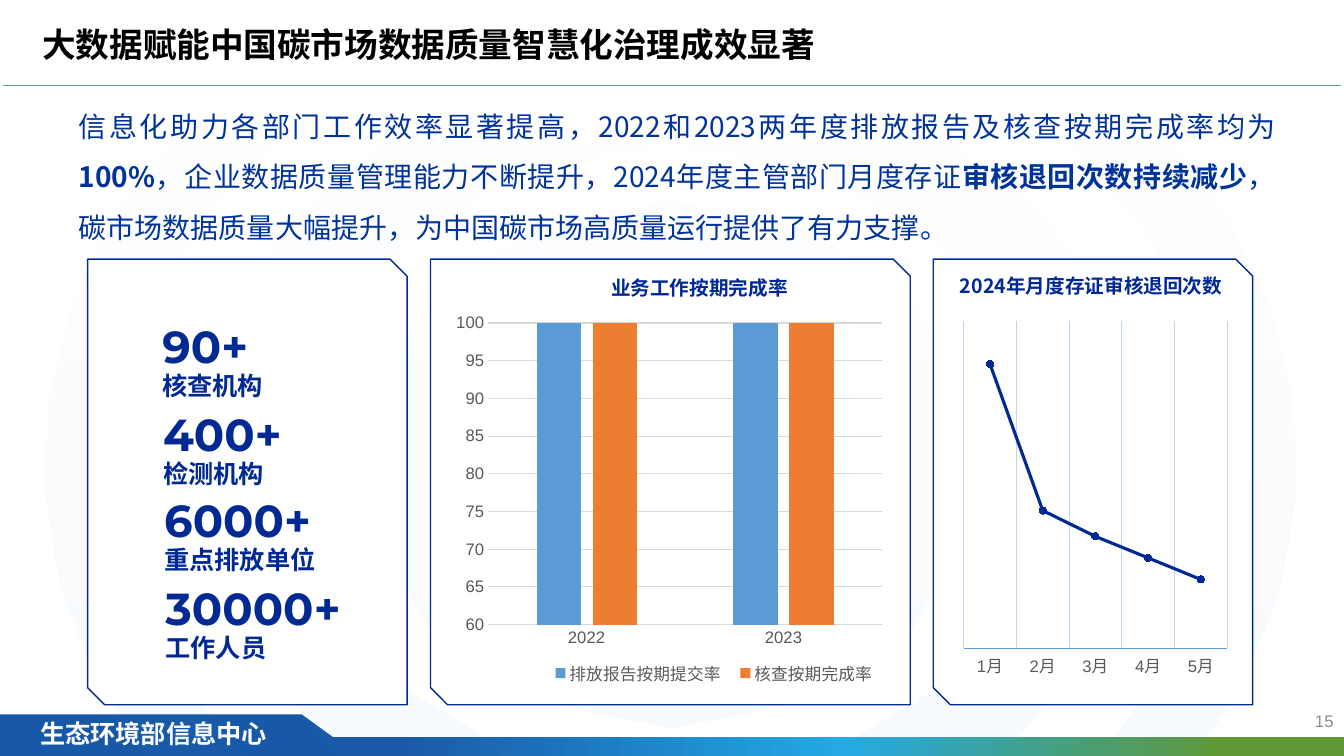
from dataclasses import dataclass
from math import asin, cos, sin
from typing import NamedTuple

from lxml import etree
from pptx import Presentation
from pptx.chart.data import CategoryChartData
from pptx.dml.color import RGBColor
from pptx.enum.chart import XL_CHART_TYPE, XL_LEGEND_POSITION, XL_MARKER_STYLE, XL_TICK_MARK
from pptx.enum.shapes import MSO_CONNECTOR, MSO_SHAPE
from pptx.enum.text import MSO_ANCHOR, MSO_AUTO_SIZE, PP_ALIGN
from pptx.oxml.ns import qn
from pptx.util import Cm, Pt

COLUMN, LINE = XL_CHART_TYPE.COLUMN_CLUSTERED, XL_CHART_TYPE.LINE_MARKERS
LEGEND_BOTTOM, CIRCLE, NO_TICK = XL_LEGEND_POSITION.BOTTOM, XL_MARKER_STYLE.CIRCLE, XL_TICK_MARK.NONE
RECT, SNIPPED, STRAIGHT = MSO_SHAPE.RECTANGLE, MSO_SHAPE.SNIP_2_DIAG_RECTANGLE, MSO_CONNECTOR.STRAIGHT
TOP, MIDDLE, NO_AUTOSIZE = MSO_ANCHOR.TOP, MSO_ANCHOR.MIDDLE, MSO_AUTO_SIZE.NONE
LEFT, CENTER, RIGHT, JUSTIFY = PP_ALIGN.LEFT, PP_ALIGN.CENTER, PP_ALIGN.RIGHT, PP_ALIGN.JUSTIFY

BLACK, WHITE = RGBColor(0, 0, 0), RGBColor(255, 255, 255)
NAVY = RGBColor(0x00, 0x29, 0x93)
BODY_BLUE = RGBColor(0x00, 0x33, 0x99)
BAND_BLUE = RGBColor(0x17, 0x58, 0xA7)
BAND_CYAN = RGBColor(0x24, 0xAA, 0xE3)
BAND_GREEN = RGBColor(0x5E, 0x99, 0x33)
SKY = RGBColor(0x5B, 0x9B, 0xD5)
PALE_SKY = RGBColor(0xBD, 0xD7, 0xEE)
ORANGE = RGBColor(0xED, 0x7D, 0x31)
GRAY = RGBColor(0x59, 0x59, 0x59)
PAGE_GRAY = RGBColor(0x8C, 0x8C, 0x8C)
GRID_GRAY = RGBColor(0xD9, 0xD9, 0xD9)
CJK, LATIN, DIGITS = "Noto Sans CJK SC", "Arial", "Montserrat"
SLIDE_W, SLIDE_H = 33.87, 19.05
CARD_Y, CARD_H, SNIP = 6.53, 11.23, 0.43
RING_X, RING_Y, RING_TOP = 16.89, 11.71, 3.58


class Box(NamedTuple):
    x: float
    y: float
    w: float
    h: float

    def emu(self) -> tuple:
        return tuple(Cm(v) for v in self)


class Stop(NamedTuple):
    pos: int
    color: RGBColor
    alpha: int = 100


class Stat(NamedTuple):
    x: float
    y: float
    value: str
    label: str


@dataclass
class Card:
    x: float
    w: float
    title: str = ""
    title_box: Box | None = None


@dataclass
class Style:
    size: float
    color: RGBColor
    font: str = CJK
    bold: bool = True
    align: PP_ALIGN = LEFT
    inset: bool = False


CARDS = [
    Card(23.52, 8.05, "2024年月度存证审核退回次数", Box(23.93, 6.91, 7.14, 0.51)),
    Card(10.85, 12.09, "业务工作按期完成率", Box(15.24, 6.96, 4.78, 0.51)),
    Card(2.21, 8.05),
]
STATS = [Stat(4.09, 8.02, "90+", "核查机构"), Stat(4.11, 10.26, "400+", "检测机构"),
         Stat(4.14, 12.42, "6000+", "重点排放单位"), Stat(4.17, 14.63, "30000+", "工作人员")]
SUMMARY = [
    ("信息化助力各部门工作效率显著提高，2022和2023两年度排放报告及核查按期完成率均为", False),
    ("100%", True),
    ("，企业数据质量管理能力不断提升，2024年度主管部门月度存证", False),
    ("审核退回次数持续减少", True),
    ("，碳市场数据质量大幅提升，为中国碳市场高质量运行提供了有力支撑。", False),
]


def format_run(r, style: Style, bold: bool) -> None:
    r.font.size, r.font.bold, r.font.name = Pt(style.size), bold, style.font
    r.font.color.rgb = style.color
    etree.SubElement(r._r.rPr, qn("a:ea")).set("typeface", CJK)


def write(sp, box: Box, text: str, style: Style, anchor=TOP) -> None:
    sp.left, sp.top, sp.width, sp.height = box.emu()
    tf = sp.text_frame
    tf.word_wrap, tf.auto_size, tf.vertical_anchor = True, NO_AUTOSIZE, anchor
    if not style.inset:
        tf.margin_left = tf.margin_right = tf.margin_top = tf.margin_bottom = 0
    tf.text = text
    p = tf.paragraphs[0]
    p.alignment = style.align
    for r in p.runs:
        format_run(r, style, style.bold)


def add_text(shapes, box: Box, text: str, style: Style, anchor=TOP) -> None:
    write(shapes.add_textbox(*box.emu()), box, text, style, anchor)


def set_gradient(sp, stops: list[Stop], angle: int) -> None:
    sp.fill.gradient()
    sp.fill.gradient_angle = angle
    gs_list = sp._element.spPr.find(".//" + qn("a:gsLst"))
    for gs in list(gs_list):
        gs_list.remove(gs)
    for stop in stops:
        gs = etree.SubElement(gs_list, qn("a:gs"), pos=str(stop.pos * 1000))
        color = etree.SubElement(gs, qn("a:srgbClr"), val=str(stop.color))
        if stop.alpha < 100:
            etree.SubElement(color, qn("a:alpha"), val=str(stop.alpha * 1000))


def add_outline(shapes, contours: list[list[tuple]]):
    """Build one borderless freeform from closed contours given in cm."""
    contours = [[(Cm(x), Cm(y)) for x, y in points] for points in contours]
    builder = shapes.build_freeform(*contours[0][0])
    for i, points in enumerate(contours):
        if i:
            builder.move_to(*points[0])
        builder.add_line_segments(points[1:], close=True)
    sp = builder.convert_to_shape()
    sp.shadow.inherit = False
    sp.line.fill.background()
    return sp


def ring_edge(rx: float) -> list[tuple]:
    """Right and left arcs of an ellipse, cut off at the top and at the slide's edge."""
    ry, steps = 0.85 * rx, 7
    start = -asin(min(1, (RING_Y - RING_TOP) / ry))
    end = asin(min(1, (SLIDE_H - RING_Y) / ry))
    arc = [start + (end - start) * i / steps for i in range(steps + 1)]
    right = [(rx * cos(a), RING_Y + ry * sin(a)) for a in arc]
    return [(RING_X + x, y) for x, y in right] + [(RING_X - x, y) for x, y in reversed(right)]


def add_card(shapes, card: Card) -> None:
    sp = shapes.add_shape(SNIPPED, *Box(card.x, CARD_Y, card.w, CARD_H).emu())
    sp.shadow.inherit = False
    sp.adjustments[0], sp.adjustments[1] = 0, SNIP / min(card.w, CARD_H)
    sp.fill.solid()
    sp.fill.fore_color.rgb = WHITE
    sp.line.color.rgb, sp.line.width = NAVY, Pt(1)
    if card.title_box:
        add_text(shapes, card.title_box, card.title, Style(14, NAVY, align=CENTER))


def set_layout(parent, index: int, box: Box, inner: bool = False) -> None:
    """Place a chart part by fractions of the chart's size."""
    for old in parent.findall(qn("c:layout")):
        parent.remove(old)
    layout = etree.Element(qn("c:layout"))
    manual = etree.SubElement(layout, qn("c:manualLayout"))
    modes = [("layoutTarget", "inner")] if inner else []
    modes += [("xMode", "edge"), ("yMode", "edge")]
    for tag, value in modes + list(box._asdict().items()):
        etree.SubElement(manual, qn("c:" + tag), val=str(value))
    parent.insert(index, layout)


def style_font(font) -> None:
    font.size, font.name, font.color.rgb = Pt(11.9), LATIN, GRAY


def add_chart(shapes, kind, box: Box, plot_box: Box, cats: list, series: dict,
              low: int, high: int, axis_color: RGBColor):
    data = CategoryChartData()
    data.categories = cats
    for name, values in series.items():
        data.add_series(name, values)
    chart = shapes.add_chart(kind, *box.emu(), data).chart
    chart.has_title = chart.has_legend = False
    style_font(chart.font)
    chart.plots[0].vary_by_categories = False
    for axis in (chart.category_axis, chart.value_axis):
        axis.major_tick_mark = axis.minor_tick_mark = NO_TICK
        style_font(axis.tick_labels.font)
    line = chart.category_axis.format.line
    line.color.rgb, line.width = axis_color, Pt(0.75)
    chart.value_axis.minimum_scale, chart.value_axis.maximum_scale = low, high
    set_layout(chart._chartSpace.chart.plotArea, 0, plot_box, inner=True)
    return chart


def show_grid(axis, color: RGBColor) -> None:
    axis.has_major_gridlines = True
    line = axis.major_gridlines.format.line
    line.color.rgb, line.width = color, Pt(0.75)


def add_returns_chart(shapes) -> None:
    chart = add_chart(shapes, LINE, Box(23.93, 7.7, 7.14, 9.82), Box(0.05, 0.04, 0.93, 0.84),
                      [f"{m}月" for m in range(1, 6)], {"Series 1": (100, 66, 60, 55, 50)}, 34, 110, SKY)
    show_grid(chart.category_axis, PALE_SKY)
    chart.value_axis.has_major_gridlines = chart.value_axis.visible = False
    s = chart.plots[0].series[0]
    s.smooth = False
    s.format.line.color.rgb, s.format.line.width = NAVY, Pt(2.25)
    s.marker.style, s.marker.size = CIRCLE, 5
    s.marker.format.fill.solid()
    s.marker.format.fill.fore_color.rgb = s.marker.format.line.color.rgb = NAVY


def add_completion_chart(shapes) -> None:
    chart = add_chart(shapes, COLUMN, Box(11.3, 7.75, 11.15, 9.75), Box(0.09, 0.04, 0.89, 0.78),
                      ["2022", "2023"], {"排放报告按期提交率": (100, 100), "核查按期完成率": (100, 100)},
                      60, 100, GRID_GRAY)
    show_grid(chart.value_axis, GRID_GRAY)
    chart.value_axis.format.line.fill.background()
    plot = chart.plots[0]
    plot.gap_width, plot.overlap = 219, -27
    for s, color in zip(plot.series, (SKY, ORANGE)):
        s.format.fill.solid()
        s.format.fill.fore_color.rgb = color
    chart.has_legend = True
    legend = chart.legend
    legend.position, legend.include_in_layout = LEGEND_BOTTOM, False
    style_font(legend.font)
    set_layout(legend._element, 1, Box(0.21, 0.91, 0.78, 0.07))


def add_footer(shapes) -> None:
    tab = add_outline(shapes, [[(0, 18), (7.6, 18), (9.05, SLIDE_H), (0, SLIDE_H)]])
    tab.fill.solid()
    tab.fill.fore_color.rgb = BAND_BLUE
    band = shapes.add_shape(RECT, *Box(0, 18.57, SLIDE_W, 0.48).emu())
    band.shadow.inherit = False
    band.line.fill.background()
    set_gradient(band, [Stop(30, BAND_BLUE), Stop(63, BAND_CYAN), Stop(91, BAND_GREEN)], 0)
    add_text(shapes, Box(0.76, 17.98, 6.71, 1.02), "生态环境部信息中心", Style(18, WHITE, LATIN, inset=True))
    add_text(shapes, Box(26.24, 17.65, 7.62, 1.02), "15",
             Style(12, PAGE_GRAY, LATIN, bold=False, align=RIGHT, inset=True), MIDDLE)


def add_summary(sp) -> None:
    style = Style(20, BODY_BLUE, align=JUSTIFY, inset=True)
    write(sp, Box(1.73, 2.21, 30.68, 3.96), "", style)
    p = sp.text_frame.paragraphs[0]
    p.line_spacing, p.space_before = 1.5, Pt(0)
    pPr = p._p.get_or_add_pPr()
    pPr.set("marL", "0")
    pPr.set("indent", "0")
    etree.SubElement(pPr, qn("a:buNone"))
    for text, bold in SUMMARY:
        r = p.add_run()
        r.text = text
        format_run(r, style, bold)


def main() -> None:
    prs = Presentation()
    prs.slide_width, prs.slide_height = Cm(SLIDE_W), Cm(SLIDE_H)
    slide = prs.slides.add_slide(prs.slide_layouts[1])
    shapes = slide.shapes
    add_footer(shapes)
    rule = shapes.add_connector(STRAIGHT, Cm(0.08), Cm(2.14), Cm(33.8), Cm(2.14))
    rule.line.color.rgb, rule.line.width = SKY, Pt(0.5)
    etree.SubElement(rule._element.spPr, qn("a:effectLst"))
    write(shapes.title, Box(0.81, 0.48, 20.52, 1.27), "大数据赋能中国碳市场数据质量智慧化治理成效显著",
          Style(24, BLACK, inset=True))
    add_summary(slide.placeholders[1])
    rings = add_outline(shapes, [ring_edge(rx) for rx in (7.8, 9.45, 11.94, 13.82, 15.8)])
    set_gradient(rings, [Stop(0, SKY, 5), Stop(100, SKY, 1)], 90)
    for card in CARDS:
        add_card(shapes, card)
    add_returns_chart(shapes)
    add_completion_chart(shapes)
    for stat in STATS:
        add_text(shapes, Box(stat.x, stat.y, 4.65, 1.37), stat.value, Style(32, NAVY, DIGITS))
        add_text(shapes, Box(stat.x, stat.y + 1.3, 5.33, 0.76), stat.label, Style(18, NAVY))
    prs.save("out.pptx")


if __name__ == "__main__":
    main()
